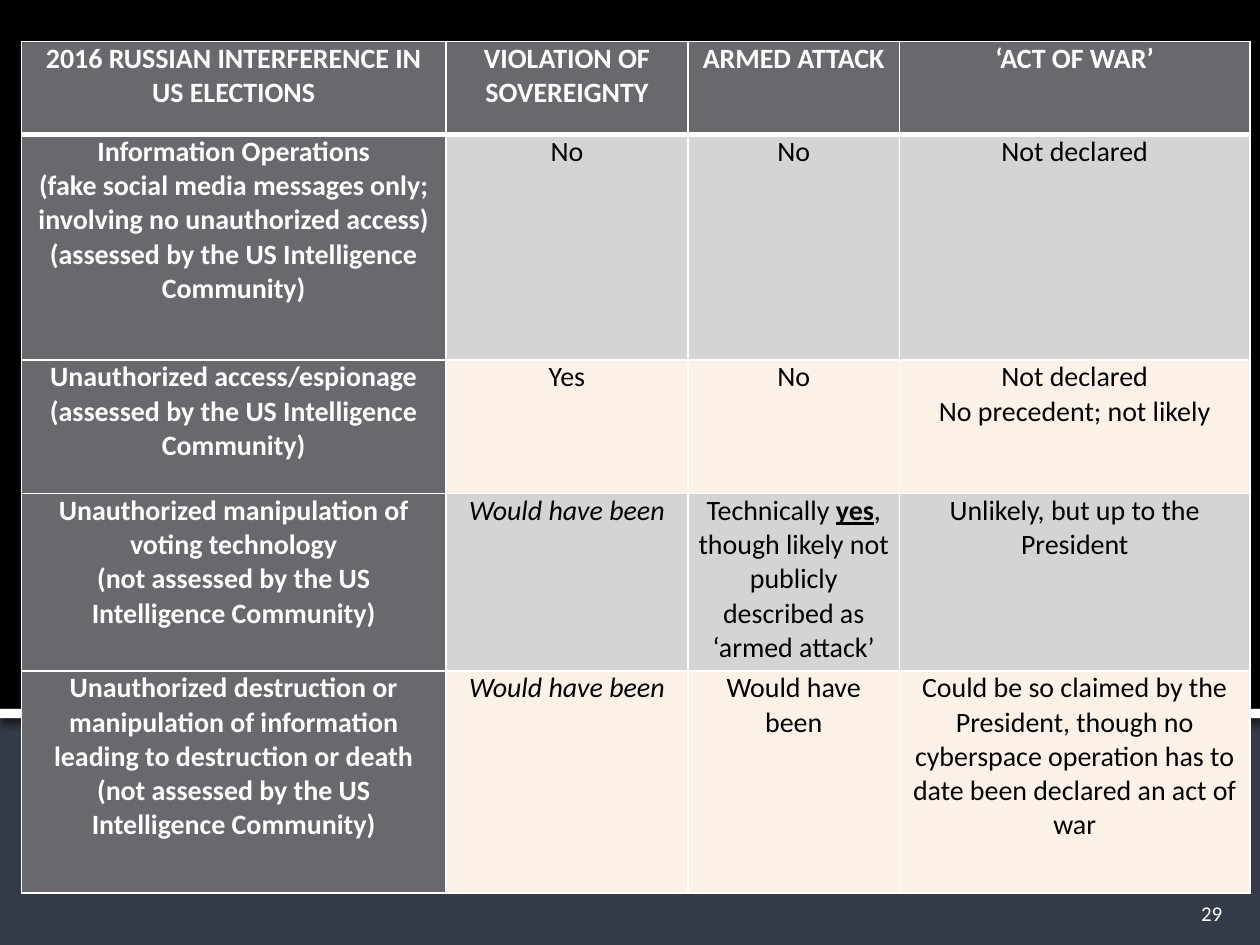
"""Build a slide that rates kinds of election interference in a table."""
from dataclasses import dataclass

from lxml.etree import SubElement
from pptx import Presentation
from pptx.dml.color import RGBColor as Rgb
from pptx.enum.shapes import MSO_SHAPE as Preset
from pptx.enum.text import MSO_ANCHOR as Anchor, PP_ALIGN as Align
from pptx.oxml.ns import qn
from pptx.util import Inches, Pt

WIDTH, HEIGHT = Inches(10), Inches(7.5)


@dataclass(frozen=True)
class Theme:
    font: str = "Calibri"
    body_size: int = 16
    number_size: int = 12
    backdrop: str = "353B47"
    dark: str = "000000"
    light: str = "FFFFFF"
    header: str = "68686D"
    bands: tuple[str, str] = ("D4D4D6", "FCF1E7")


@dataclass(frozen=True)
class Area:
    """A rectangle in shares of the slide's size."""
    left: float
    top: float
    width: float
    height: float

    def lengths(self) -> tuple[int, int, int, int]:
        return (round(self.left * WIDTH), round(self.top * HEIGHT),
                round(self.width * WIDTH), round(self.height * HEIGHT))


@dataclass(frozen=True)
class Span:
    text: str
    bold: bool = False
    italic: bool = False
    underline: bool = False


@dataclass(frozen=True)
class Entry:
    """The paragraphs of a cell, each a string or a tuple of spans."""
    paragraphs: tuple

    def spans(self) -> list[tuple]:
        return [(Span(item),) if isinstance(item, str) else item for item in self.paragraphs]


def entry(*paragraphs) -> Entry:
    return Entry(paragraphs)


THEME = Theme()
UPPER = Area(0, 0, 1, 0.75)
RULE = Area(0, 0.75, 1, 0.01)
NUMBER = Area(0.9, 0.94, 0.08, 0.04)
GRID = Area(0.02, 0.04, 0.98, 0.9)
TABLE = Area(0.017, 0.044, 0.975, 0.901)
COLUMNS = (3.37, 1.92, 1.68, 2.78)
ROWS = (0.74, 1.79, 1.06, 1.41, 1.76)
ASSESSED = "(assessed by the US Intelligence Community)"
NOT_ASSESSED = "(not assessed by the US Intelligence Community)"
HYPOTHETICAL = entry((Span("Would have been", italic=True),))

ENTRIES = (
    (entry("2016 RUSSIAN INTERFERENCE IN US ELECTIONS"), entry("VIOLATION OF SOVEREIGNTY"),
     entry("ARMED ATTACK"), entry("‘ACT OF WAR’")),
    (entry("Information Operations",
           "(fake social media messages only; involving no unauthorized access)", ASSESSED),
     entry("No"), entry("No"), entry("Not declared")),
    (entry("Unauthorized access/espionage", ASSESSED),
     entry("Yes"), entry("No"), entry("Not declared", "No precedent; not likely")),
    (entry("Unauthorized manipulation of voting technology", NOT_ASSESSED),
     HYPOTHETICAL,
     entry((Span("Technically "), Span("yes", bold=True, underline=True),
            Span(", though likely not publicly described as ‘armed attack’"))),
     entry("Unlikely, but up to the President")),
    (entry("Unauthorized destruction or manipulation of information leading to "
           "destruction or death", NOT_ASSESSED),
     HYPOTHETICAL, entry("Would have been"),
     entry("Could be so claimed by the President, though no cyberspace operation has to "
           "date been declared an act of war")),
)


def add_span(para, span: Span, size: int, color: str, bold: bool = False) -> None:
    run = para.add_run()
    run.text = span.text
    font = run.font
    font.name, font.size = THEME.font, Pt(size)
    font.color.rgb = Rgb.from_string(color)
    font.bold, font.italic, font.underline = bold or span.bold, span.italic, span.underline


def add_band(page, area: Area, color: str):
    band = page.shapes.add_shape(Preset.RECTANGLE, *area.lengths())
    band.shadow.inherit = False
    band.fill.solid()
    band.fill.fore_color.rgb = Rgb.from_string(color)
    band.line.fill.background()
    return band


def add_shadow(shape) -> None:
    effects = shape._element.spPr.find(qn("a:effectLst"))
    shadow = SubElement(effects, qn("a:outerShdw"), blurRad=str(Pt(5)), dist=str(Pt(2.5)),
                        dir="5400000", rotWithShape="0")
    color = SubElement(shadow, qn("a:srgbClr"), val=THEME.dark)
    SubElement(color, qn("a:alpha"), val="60000")


def add_number(page, text: str) -> None:
    box = page.shapes.add_textbox(*NUMBER.lengths())
    frame = box.text_frame
    frame.word_wrap, frame.vertical_anchor = True, Anchor.BOTTOM
    frame.margin_bottom = 0
    para = frame.paragraphs[0]
    para.alignment = Align.RIGHT
    add_span(para, Span(text), THEME.number_size, THEME.light)


def set_borders(cell, top: float, bottom: float) -> None:
    properties = cell._tc.get_or_add_tcPr()
    for side, points in (("L", 1), ("R", 1), ("T", top), ("B", bottom)):
        line = SubElement(properties, qn(f"a:ln{side}"), w=str(Pt(points)))
        fill = SubElement(line, qn("a:solidFill"))
        SubElement(fill, qn("a:srgbClr"), val=THEME.light)


def fill_cell(cell, content: Entry, row: int, column: int) -> None:
    heading = row == 0 or column == 0
    set_borders(cell, 3 if row == 1 else 1, 3 if row == 0 else 1)
    cell.fill.solid()
    shade = THEME.header if heading else THEME.bands[(row - 1) % 2]
    cell.fill.fore_color.rgb = Rgb.from_string(shade)
    cell.margin_left = cell.margin_right = Inches(0.07)
    cell.margin_top = cell.margin_bottom = 0
    frame = cell.text_frame
    for index, spans in enumerate(content.spans()):
        para = frame.add_paragraph() if index else frame.paragraphs[0]
        para.alignment = Align.CENTER
        for span in spans:
            add_span(para, span, THEME.body_size,
                     THEME.light if heading else THEME.dark, heading)


def add_grid(page) -> None:
    left, top, width, height = TABLE.lengths()
    table = page.shapes.add_table(len(ROWS), len(COLUMNS), left, top, width, height).table
    for column, weight in zip(table.columns, COLUMNS):
        column.width = round(width * weight / sum(COLUMNS))
    for row, weight in zip(table.rows, ROWS):
        row.height = round(height * weight / sum(ROWS))
    for row, contents in enumerate(ENTRIES):
        for column, content in enumerate(contents):
            fill_cell(table.cell(row, column), content, row, column)


def main() -> None:
    deck = Presentation()
    deck.slide_width, deck.slide_height = WIDTH, HEIGHT
    page = deck.slides.add_slide(deck.slide_layouts[6])
    page.background.fill.solid()
    page.background.fill.fore_color.rgb = Rgb.from_string(THEME.backdrop)
    add_band(page, UPPER, THEME.dark)
    add_shadow(add_band(page, RULE, THEME.light))
    add_number(page, "29")
    add_grid(page)
    deck.save("out.pptx")


if __name__ == "__main__":
    main()
